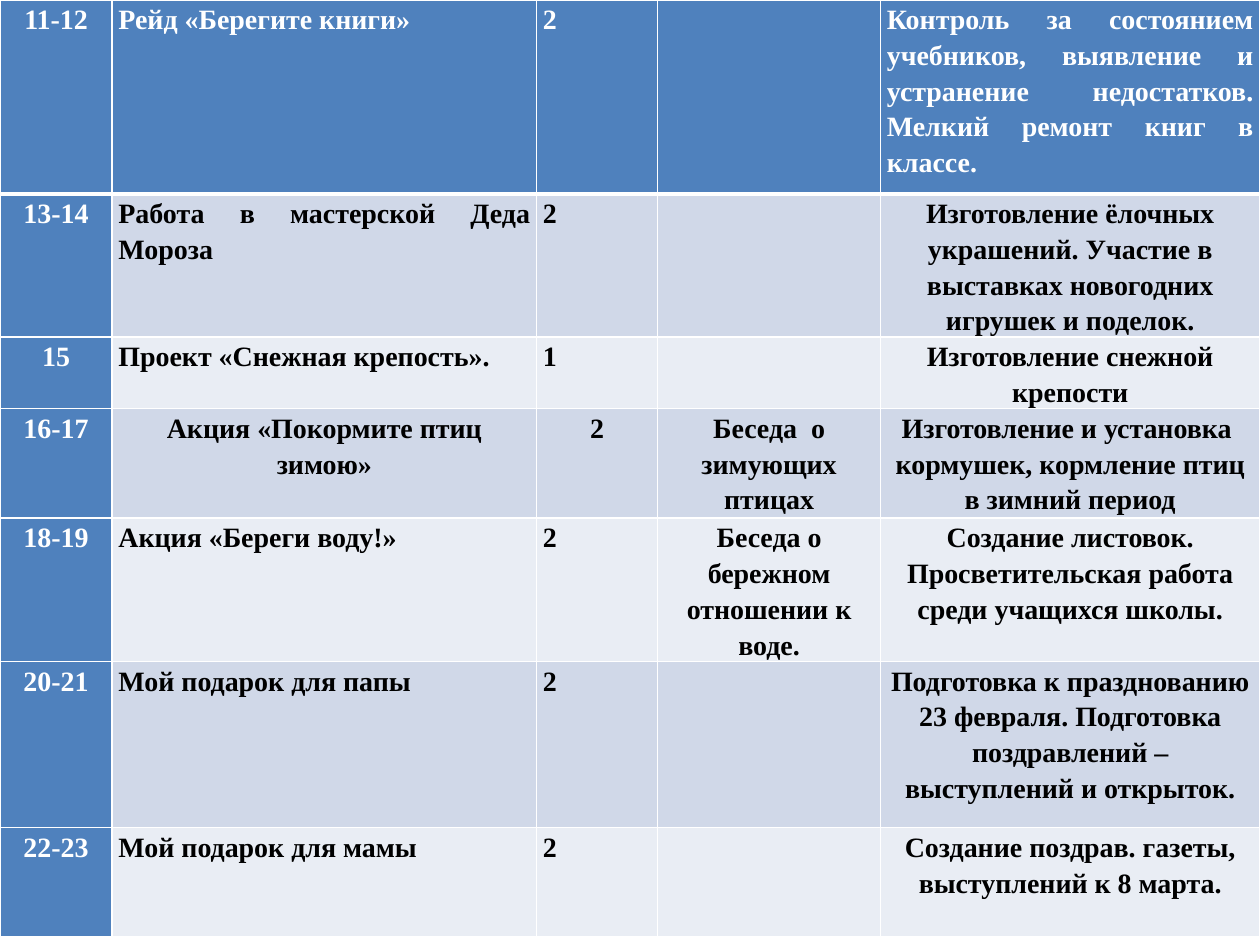
from lxml import etree
from pptx import Presentation
from pptx.dml.color import RGBColor
from pptx.enum.text import PP_ALIGN
from pptx.oxml.ns import qn
from pptx.util import Inches, Pt

CENTER, JUSTIFY = PP_ALIGN.CENTER, PP_ALIGN.JUSTIFY
COLORS = {"head": "4F81BD", "odd": "D0D8E8", "even": "E9EDF4",
          "light": "FFFFFF", "dark": "000000"}
FONT = {"name": "Times New Roman", "size": Pt(16), "bold": True}
MARGINS = {"margin_left": Inches(0.05), "margin_right": Inches(0.05),
           "margin_top": 0, "margin_bottom": 0}
COL_PERCENT = [8.9, 33.7, 9.6, 17.7, 30.1]
ROW_PERCENT = [20.53, 14.53, 5.73, 11.6, 11.6, 17.6, 11.6]
TABLE_PERCENT = 102.8
CENTERED_ROW = 3
PLAN = [
    ["11-12", "Рейд «Берегите книги»", "2", "",
     "Контроль за состоянием учебников, выявление и устранение недостатков. "
     "Мелкий ремонт книг в классе."],
    ["13-14", "Работа в мастерской Деда Мороза", "2", "",
     "Изготовление ёлочных украшений. Участие в выставках новогодних игрушек и поделок."],
    ["15", "Проект «Снежная крепость».", "1", "", "Изготовление снежной крепости"],
    ["16-17", "Акция «Покормите птиц зимою»", "2", "Беседа  о зимующих птицах",
     "Изготовление и установка  кормушек, кормление птиц в зимний период"],
    ["18-19", "Акция «Береги воду!»", "2", "Беседа о бережном отношении к воде.",
     "Создание листовок.\nПросветительская работа среди учащихся школы."],
    ["20-21", "Мой подарок для папы", "2", "",
     "Подготовка к празднованию 23 февраля. Подготовка поздравлений – "
     "выступлений и открыток."],
    ["22-23", "Мой подарок для мамы", "2", "",
     "Создание поздрав. газеты, выступлений к 8 марта."],
]


def set_format(obj, values):
    """Set each attribute named in values on obj."""
    for name, value in values.items():
        setattr(obj, name, value)


def share(length, percent):
    """Return a percentage of a length as a whole number."""
    return round(length * percent / 100)


def add_borders(cell, widths):
    """Put solid light borders on the sides given in widths."""
    tcPr = cell._tc.get_or_add_tcPr()
    for i, (side, width) in enumerate(widths.items()):
        ln = etree.Element(qn(f"a:ln{side}"), w=str(Pt(width)))
        fill = etree.SubElement(ln, qn("a:solidFill"))
        etree.SubElement(fill, qn("a:srgbClr"), val=COLORS["light"])
        tcPr.insert(i, ln)


def write_text(cell, text, align, color):
    """Write the lines of a cell in the table's font."""
    cell.text = text
    for p in cell.text_frame.paragraphs:
        set_format(p, {"alignment": align, "line_spacing": 1.15})
        for r in p.runs:
            set_format(r.font, FONT)
            r.font.color.rgb = RGBColor.from_string(COLORS[color])


def style_cell(cell, row, col):
    """Give a cell its margins, fill and borders, and return its text colour."""
    set_format(cell, MARGINS)
    head = row == 0 or col == 0
    band = "head" if head else "odd" if row % 2 else "even"
    cell.fill.solid()
    cell.fill.fore_color.rgb = RGBColor.from_string(COLORS[band])
    add_borders(cell, {"L": 1, "R": 1, "T": 3 if row == 1 else 1,
                       "B": 3 if row == 0 else 1})
    return "light" if head else "dark"


def text_align(row, col):
    """Return the alignment for a place in the table."""
    if row == CENTERED_ROW or col == 0:
        return CENTER
    return JUSTIFY if row == 0 or col < 3 else CENTER


def add_plan(s, width, height):
    """Add the plan of activities as a table across the slide."""
    frame = s.shapes.add_table(len(PLAN), len(COL_PERCENT), 0, 0, width, height)
    table = frame.table
    set_format(table, {"first_row": False, "horz_banding": False})
    for column, percent in zip(table.columns, COL_PERCENT):
        column.width = share(width, percent)
    for row, percent in zip(table.rows, ROW_PERCENT):
        row.height = share(height, percent)
    frame.height = share(height, TABLE_PERCENT)
    for i, texts in enumerate(PLAN):
        for j, text in enumerate(texts):
            cell = table.cell(i, j)
            color = style_cell(cell, i, j)
            if text:
                write_text(cell, text, text_align(i, j), color)


def main():
    """Build the slide and save it."""
    prs = Presentation()
    set_format(prs, {"slide_width": Inches(10), "slide_height": Inches(7.5)})
    s = prs.slides.add_slide(prs.slide_layouts[6])
    add_plan(s, prs.slide_width, prs.slide_height)
    prs.save("out.pptx")


if __name__ == "__main__":
    main()
